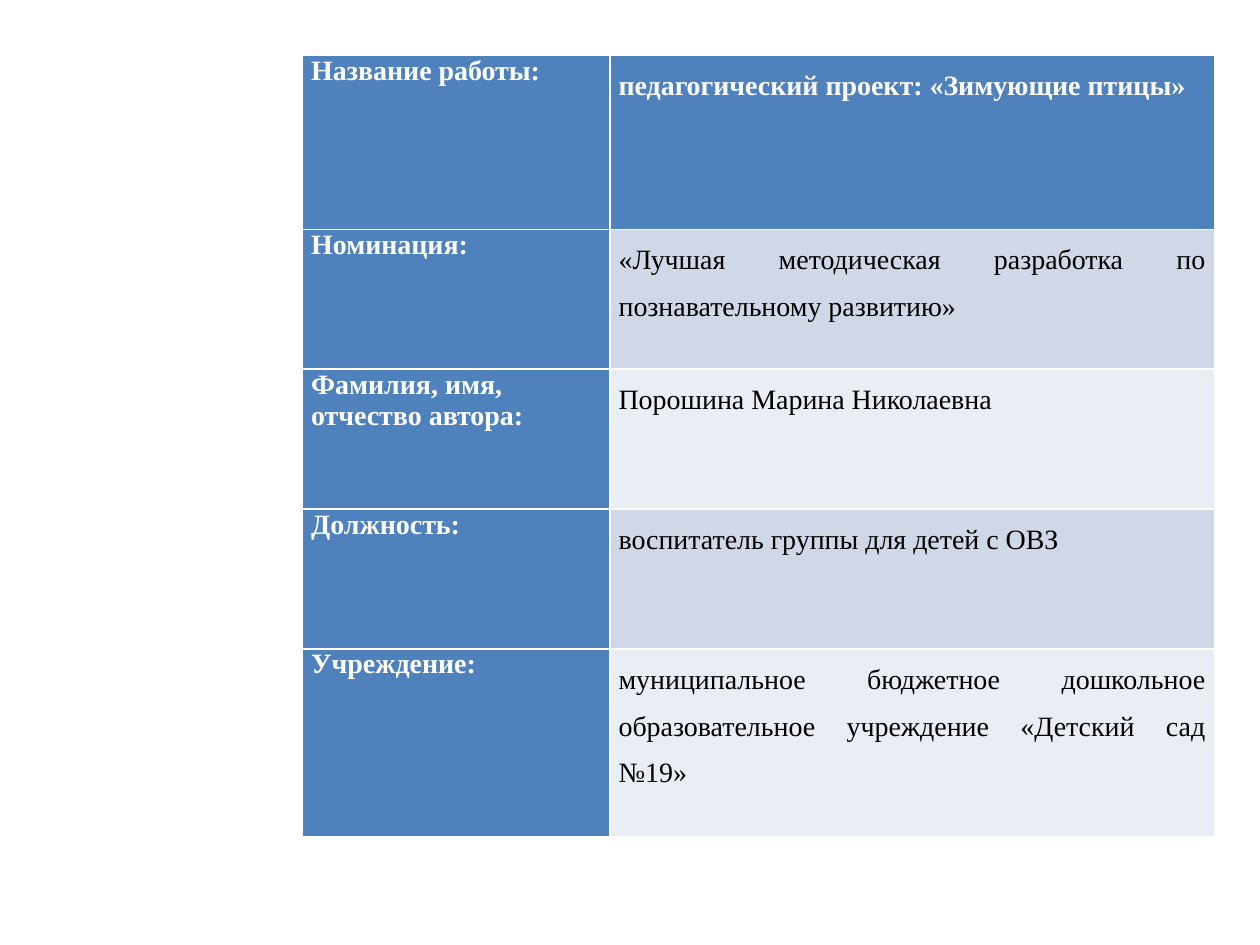
from pptx import Presentation
from pptx.dml.color import RGBColor
from pptx.enum.text import PP_ALIGN
from pptx.util import Inches, Pt

WHITE = RGBColor(0xFF, 0xFF, 0xFF)
BLACK = RGBColor(0x00, 0x00, 0x00)
BLUE = RGBColor(0x4F, 0x81, 0xBD)
BAND_DARK = RGBColor(0xD0, 0xD8, 0xE8)
BAND_LIGHT = RGBColor(0xE9, 0xED, 0xF4)

COLUMN_WIDTHS = [2.44, 4.8]
ROWS = [
    (1.38, "Название работы:", "педагогический проект: «Зимующие птицы»"),
    (1.11, "Номинация:",
     "«Лучшая методическая разработка по познавательному развитию»"),
    (1.11, "Фамилия, имя, отчество автора:", "Порошина Марина Николаевна"),
    (1.11, "Должность:", "воспитатель группы для детей с ОВЗ"),
    (1.49, "Учреждение:",
     "муниципальное бюджетное дошкольное образовательное учреждение "
     "«Детский сад №19»"),
]

presentation = Presentation()
presentation.slide_width = Inches(10)
presentation.slide_height = Inches(7.5)
slide = presentation.slides.add_slide(presentation.slide_layouts[6])

# The default table style draws the white grid and the thicker header rule.
table_height = sum(height for height, _, _ in ROWS)
table = slide.shapes.add_table(
    len(ROWS), len(COLUMN_WIDTHS), Inches(2.4), Inches(0.44),
    Inches(sum(COLUMN_WIDTHS)), Inches(table_height)).table
for column, width in zip(table.columns, COLUMN_WIDTHS):
    column.width = Inches(width)

for row_index, (height, *texts) in enumerate(ROWS):
    table.rows[row_index].height = Inches(height)
    for column_index, text in enumerate(texts):
        is_heading = row_index == 0 or column_index == 0
        band = BAND_DARK if row_index % 2 else BAND_LIGHT
        cell = table.cell(row_index, column_index)
        cell.margin_left = cell.margin_right = Inches(0.07)
        cell.margin_top = cell.margin_bottom = 0
        cell.fill.solid()
        cell.fill.fore_color.rgb = BLUE if is_heading else band

        cell.text_frame.text = text
        paragraph = cell.text_frame.paragraphs[0]
        if column_index == 1:
            paragraph.alignment = PP_ALIGN.JUSTIFY
            paragraph.line_spacing = 1.5
        font = paragraph.runs[0].font
        font.name = "Times New Roman"
        font.size = Pt(16)
        font.bold = is_heading
        font.color.rgb = WHITE if is_heading else BLACK

presentation.save("out.pptx")
